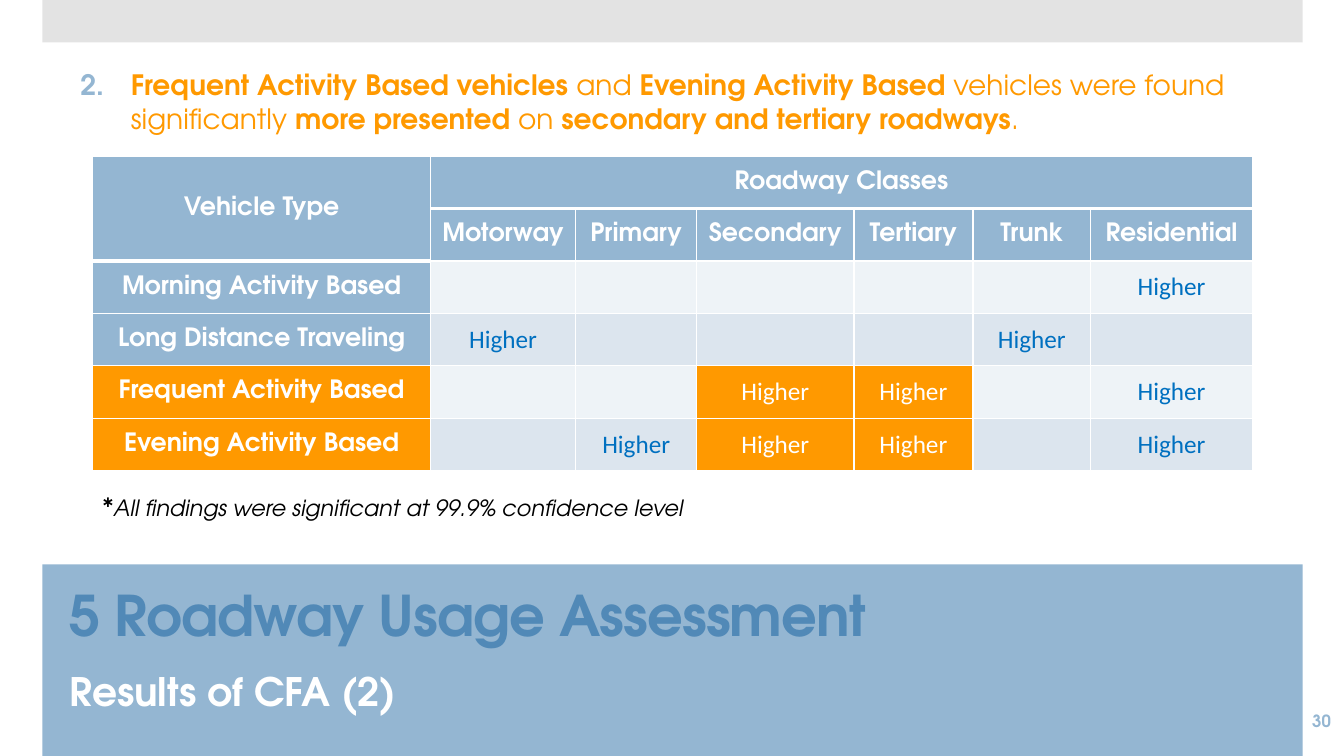
from dataclasses import dataclass

from pptx import Presentation
from pptx.dml.color import RGBColor
from pptx.enum.shapes import MSO_SHAPE as Shape
from pptx.enum.text import MSO_ANCHOR as Anchor, PP_ALIGN as Align
from pptx.oxml.ns import qn
from pptx.util import Emu, Pt
from lxml.etree import SubElement

EMU_PER_PX = 9144  # 100 px to the inch


@dataclass(frozen=True)
class Theme:
    blue: str = "94B6D2"
    deep_blue: str = "5189B7"
    value_blue: str = "0070C0"
    orange: str = "FF9900"
    grey: str = "C8C8C8"
    white: str = "FFFFFF"
    black: str = "000000"
    stripes: tuple = ("EEF3F7", "DCE5EE")
    heading_font: str = "TeX Gyre Adventor"
    value_font: str = "Calibri"
    title: int = 40
    subtitle: int = 28
    body: int = 20
    table: int = 18
    note: int = 16
    page: int = 12


THEME = Theme()

FINDING = [
    ("Frequent Activity Based vehicles ", True),
    ("and ", False),
    ("Evening Activity Based ", True),
    ("vehicles were found significantly ", False),
    ("more presented ", True),
    ("on ", False),
    ("secondary and tertiary roadways", True),
    (".", False),
]
ROADWAYS = ["Motorway", "Primary", "Secondary", "Tertiary", "Trunk", "Residential"]
HIGHER_ROADWAYS = {
    "Morning Activity Based": ["Residential"],
    "Long Distance Traveling": ["Motorway", "Trunk"],
    "Frequent Activity Based": ["Secondary", "Tertiary", "Residential"],
    "Evening Activity Based": ["Primary", "Secondary", "Tertiary", "Residential"],
}
FOCUS_VEHICLES = ("Frequent Activity Based", "Evening Activity Based")
FOCUS_ROADWAYS = ("Secondary", "Tertiary")
COLUMN_WIDTHS = [335, 144, 120, 156, 118, 117, 160]
ROW_HEIGHT = 52


def px(value):
    return Emu(value * EMU_PER_PX)


def box(*lengths):
    return [px(length) for length in lengths]


def apply(target, formats):
    for name, value in formats.items():
        setattr(target, name, value)


def add_run(paragraph, text, size, color, font=THEME.heading_font, **formats):
    run = paragraph.add_run()
    run.text = text
    apply(run.font, {"size": Pt(size), "name": font, **formats})
    run.font.color.rgb = RGBColor.from_string(color)
    return run


def add_band(slide, bounds, color, opacity=100):
    shape = slide.shapes.add_shape(Shape.RECTANGLE, *box(*bounds))
    shape.shadow.inherit = False
    shape.fill.solid()
    shape.fill.fore_color.rgb = RGBColor.from_string(color)
    shape.line.fill.background()
    if opacity < 100:
        color_element = shape.fill._xPr.find(f".//{qn('a:srgbClr')}")
        SubElement(color_element, qn("a:alpha"), val=str(opacity * 1000))


def add_text(slide, bounds, anchor=Anchor.TOP, wrap=True, **formats):
    frame = slide.shapes.add_textbox(*box(*bounds)).text_frame
    apply(frame, {"word_wrap": wrap, "vertical_anchor": anchor})
    paragraph = frame.paragraphs[0]
    apply(paragraph, formats)
    return paragraph


def number_paragraph(paragraph, start, indent, color):
    properties = paragraph._p.get_or_add_pPr()
    properties.set("marL", str(px(indent)))
    properties.set("indent", str(px(-indent)))
    bullet_color = SubElement(properties, qn("a:buClr"))
    SubElement(bullet_color, qn("a:srgbClr"), val=color)
    SubElement(properties, qn("a:buAutoNum"), type="arabicPeriod", startAt=str(start))


def rule_below(row, column):
    """Width in points of the white rule under a cell; headings get a thick one."""
    return 3 if row == 0 or (row, column) == (1, 0) else 1


def set_borders(cell, row, column):
    top = rule_below(row - 1, column) if row else 1
    widths = {"L": 1, "R": 1, "T": top, "B": rule_below(row, column)}
    for side, width in widths.items():
        line = SubElement(cell._tc.get_or_add_tcPr(), qn(f"a:ln{side}"), w=str(Pt(width)))
        fill = SubElement(line, qn("a:solidFill"))
        SubElement(fill, qn("a:srgbClr"), val=THEME.white)


def fill_cell(cell, text, fill, color=THEME.white, font=THEME.heading_font, bold=True):
    cell.fill.solid()
    cell.fill.fore_color.rgb = RGBColor.from_string(fill)
    apply(cell, {"vertical_anchor": Anchor.MIDDLE, "margin_left": px(7),
                 "margin_right": px(7), "margin_top": 0, "margin_bottom": 0})
    paragraph = cell.text_frame.paragraphs[0]
    paragraph.alignment = Align.CENTER
    if text:
        add_run(paragraph, text, THEME.table, color, font, bold=bold)


def add_roadway_table(slide, left, top):
    row_count = len(HIGHER_ROADWAYS) + 2
    bounds = box(left, top, sum(COLUMN_WIDTHS), row_count * ROW_HEIGHT)
    table = slide.shapes.add_table(row_count, len(COLUMN_WIDTHS), *bounds).table
    apply(table, {"first_row": False, "horz_banding": False})
    for column, width in zip(table.columns, COLUMN_WIDTHS):
        column.width = px(width)
    for row in range(row_count):
        table.rows[row].height = px(ROW_HEIGHT)
        for column in range(len(COLUMN_WIDTHS)):
            set_borders(table.cell(row, column), row, column)

    # Two heading rows
    headings = [["Vehicle Type", "Roadway Classes"] + [""] * 5, [""] + ROADWAYS]
    for row, labels in enumerate(headings):
        for column, label in enumerate(labels):
            fill_cell(table.cell(row, column), label, THEME.blue)
    table.cell(0, 0).merge(table.cell(1, 0))
    table.cell(0, 1).merge(table.cell(0, len(ROADWAYS)))

    # One row per vehicle type
    for index, (vehicle, higher) in enumerate(HIGHER_ROADWAYS.items()):
        row = index + 2
        in_focus = vehicle in FOCUS_VEHICLES
        fill_cell(table.cell(row, 0), vehicle, THEME.orange if in_focus else THEME.blue)
        for column, roadway in enumerate(ROADWAYS, 1):
            marked = in_focus and roadway in FOCUS_ROADWAYS
            fill_cell(table.cell(row, column),
                      "Higher" if roadway in higher else "",
                      THEME.orange if marked else THEME.stripes[index % 2],
                      THEME.white if marked else THEME.value_blue,
                      THEME.value_font, bold=False)


def main():
    presentation = Presentation()
    apply(presentation, {"slide_width": px(1333), "slide_height": px(750)})
    slide = presentation.slides.add_slide(presentation.slide_layouts[6])

    # Bands
    add_band(slide, (42, 560, 1250, 190), THEME.blue)
    add_band(slide, (42, 0, 1250, 42), THEME.grey, opacity=50)

    # Finding
    finding = add_text(slide, (70, 52, 1193, 97), Anchor.MIDDLE)
    number_paragraph(finding, start=2, indent=50, color=THEME.blue)
    for text, bold in FINDING:
        add_run(finding, text, THEME.body, THEME.orange, bold=bold)

    # Table and its note
    add_roadway_table(slide, 92, 155)
    note = add_text(slide, (92, 483, 608, 40), wrap=False)
    add_run(note, "*", THEME.table, THEME.black, italic=True)
    add_run(note, "All findings were significant at 99.9% confidence level",
            THEME.note, THEME.black, italic=True)

    # Title, subtitle and page number
    title = add_text(slide, (59, 562, 1193, 103), Anchor.MIDDLE,
                     line_spacing=0.9, space_after=Pt(6))
    title_run = add_run(title, "5 Roadway Usage Assessment", THEME.title,
                        THEME.deep_blue, bold=True)
    title_run.font._element.set("spc", "-60")
    subtitle = add_text(slide, (59, 657, 347, 57), wrap=False)
    add_run(subtitle, "Results of CFA (2)", THEME.subtitle, THEME.white, bold=True)
    page = add_text(slide, (1163, 695, 167, 40), Anchor.MIDDLE, alignment=Align.RIGHT)
    add_run(page, "30", THEME.page, THEME.blue, bold=True)

    presentation.save("out.pptx")


if __name__ == "__main__":
    main()
